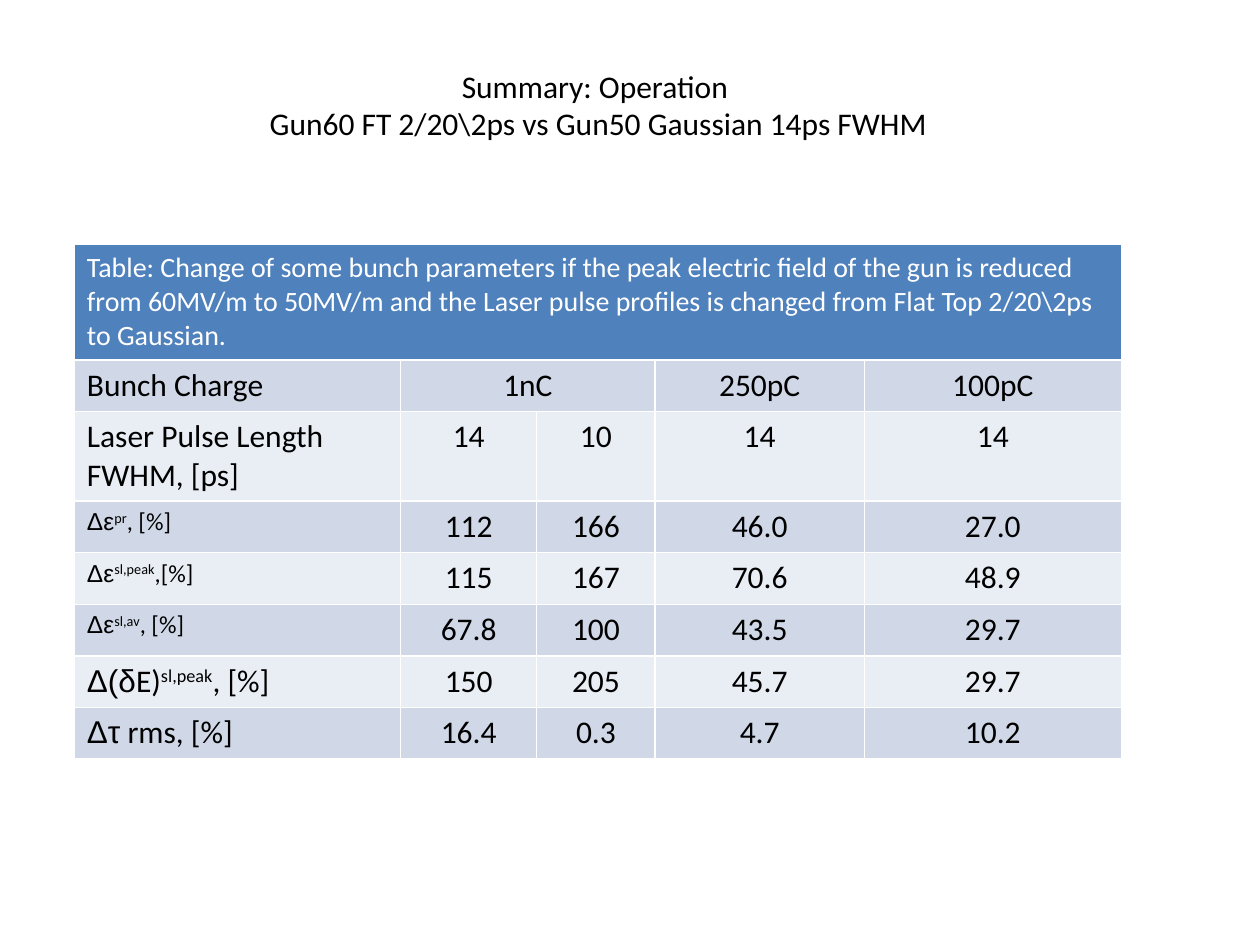
import pptx
import pptx.util
import pptx.dml.color
import pptx.enum.text

Inches = pptx.util.Inches
ALIGN = pptx.enum.text.PP_ALIGN

TITLE = ["Summary: Operation ", "Gun60 FT 2/20\\2ps vs Gun50 Gaussian 14ps FWHM"]
HEAD = ("Table: Change of some bunch parameters if the peak electric field of the gun "
        "is reduced from 60MV/m to 50MV/m and the Laser pulse profiles is changed "
        "from Flat Top 2/20\\2ps to Gaussian.")
# Each label: size, Greek part, plain part, raised part, unit
ROWS = [
    ((18, "", "Bunch Charge", "", ""), ["1nC", "", "250pC", "100pC"]),
    ((18, "", "Laser Pulse Length FWHM, [ps]", "", ""), ["14", "10", "14", "14"]),
    ((14, "Δε", "", "pr", ", [%]"), ["112", "166", "46.0", "27.0"]),
    ((14, "Δε", "", "sl,peak", ",[%]"), ["115", "167", "70.6", "48.9"]),
    ((14, "Δε", "", "sl,av", ", [%]"), ["67.8", "100", "43.5", "29.7"]),
    ((18, "Δ(δ", "E)", "sl,peak", ", [%]"), ["150", "205", "45.7", "29.7"]),
    ((18, "Δτ", " rms, [%]", "", ""), ["16.4", "0.3", "4.7", "10.2"]),
]
WIDTHS = [2.59, 1.08, 0.94, 1.66, 2.04]
HEIGHT = 0.41
BLUE, BANDS = "4F81BD", ["D0D8E8", "E9EDF4"]


def color(code):
    return pptx.dml.color.RGBColor.from_string(code)


def write(par, text, size=18, font="Calibri", ink="000000", align=ALIGN.LEFT, base=0):
    """Add one run to a paragraph; base raises it by that many percent."""
    par.alignment = align
    if not text:
        return
    run = par.add_run()
    run.text = text
    run.font.size = pptx.util.Pt(size)
    run.font.name = font
    run.font.bold = False
    run.font.color.rgb = color(ink)
    if base:
        run.font._element.set("baseline", str(base * 1000))


def label(par, size, greek, plain, raised, unit):
    write(par, greek, size=size, font="Arial")
    write(par, plain, size=size)
    write(par, raised, size=size, base=30)
    write(par, unit, size=size)


def paint(cell, code):
    cell.fill.solid()
    cell.fill.fore_color.rgb = color(code)


def add_title(slide):
    box = slide.shapes.add_textbox(Inches(2.01), Inches(0.48), Inches(5.48), Inches(0.71))
    frame = box.text_frame
    frame.word_wrap = False
    frame.auto_size = pptx.enum.text.MSO_AUTO_SIZE.SHAPE_TO_FIT_TEXT
    for i, line in enumerate(TITLE):
        par = frame.add_paragraph() if i else frame.paragraphs[0]
        write(par, line, align=ALIGN.CENTER)


def add_grid(slide):
    count = len(ROWS) + 1
    table = slide.shapes.add_table(
        count, len(WIDTHS), Inches(0.59), Inches(1.94),
        Inches(sum(WIDTHS)), Inches(HEIGHT * count)).table
    for col, width in zip(table.columns, WIDTHS):
        col.width = Inches(width)
    for row in table.rows:
        row.height = Inches(HEIGHT)

    top = table.cell(0, 0)
    top.merge(table.cell(0, len(WIDTHS) - 1))
    paint(top, BLUE)
    write(top.text_frame.paragraphs[0], HEAD, size=16, ink="FFFFFF")
    table.cell(1, 1).merge(table.cell(1, 2))

    for r, (name, values) in enumerate(ROWS, 1):
        for cell in table.rows[r].cells:
            paint(cell, BANDS[(r - 1) % 2])
        label(table.cell(r, 0).text_frame.paragraphs[0], *name)
        for c, value in enumerate(values, 1):
            write(table.cell(r, c).text_frame.paragraphs[0], value, align=ALIGN.CENTER)


def main():
    deck = pptx.Presentation()
    deck.slide_width, deck.slide_height = Inches(10), Inches(7.5)
    slide = deck.slides.add_slide(deck.slide_layouts[6])
    add_grid(slide)
    add_title(slide)
    deck.save("out.pptx")


if __name__ == "__main__":
    main()
